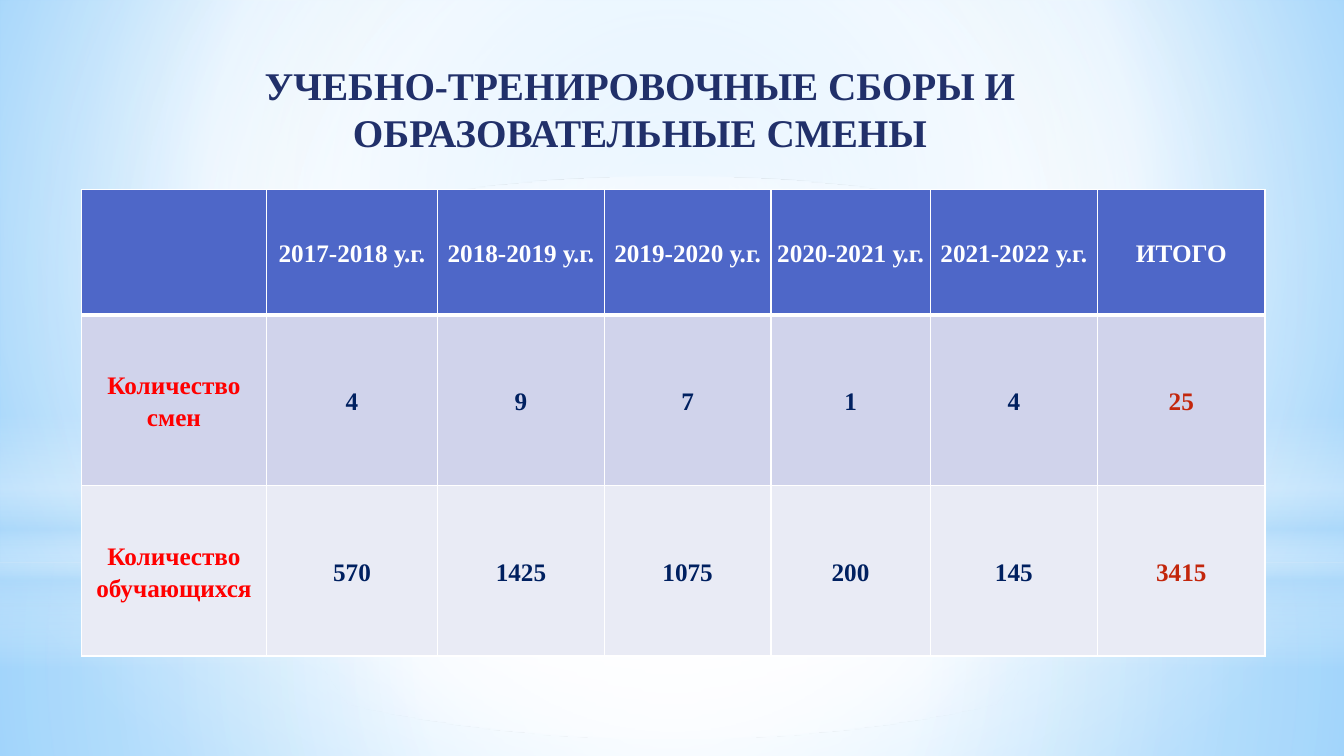
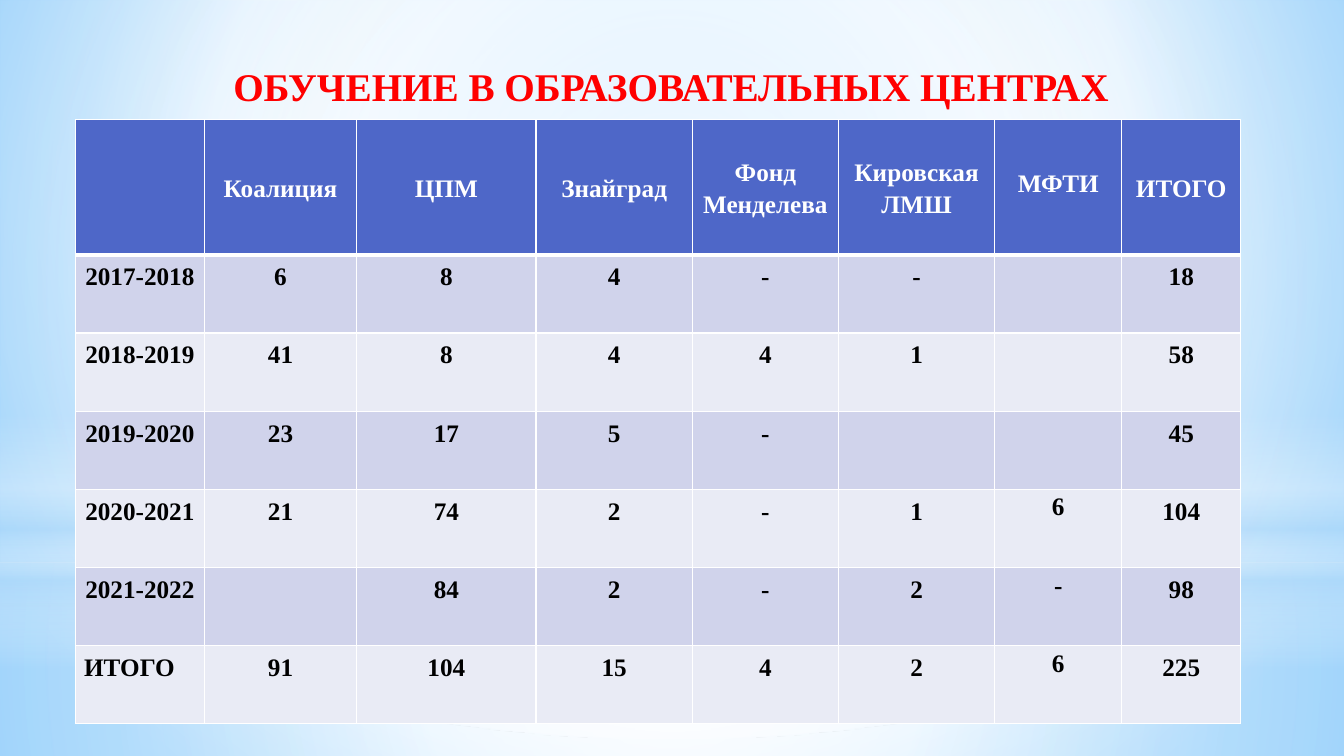
"""Build two slides with tables on training camps and learning centres."""
from dataclasses import dataclass

from lxml import etree
from pptx import Presentation
from pptx.dml.color import RGBColor
from pptx.enum.shapes import MSO_SHAPE
from pptx.enum.text import MSO_ANCHOR, MSO_AUTO_SIZE, PP_ALIGN
from pptx.oxml.ns import qn
from pptx.util import Cm, Pt

RECT, OVAL = MSO_SHAPE.RECTANGLE, MSO_SHAPE.OVAL
TOP, MIDDLE = MSO_ANCHOR.TOP, MSO_ANCHOR.MIDDLE
LEFT, CENTER = PP_ALIGN.LEFT, PP_ALIGN.CENTER
FIXED = MSO_AUTO_SIZE.NONE


@dataclass(frozen=True)
class Theme:
    """Colours, type sizes and measures of the deck."""
    font: str = "Times New Roman"
    head: int = 28
    body: int = 18
    lead: float = 1.15
    after: int = 10
    thin: int = 1
    thick: int = 3
    wide: float = 33.87
    high: float = 19.05
    pad: tuple = (0.22, 0.11)
    white: str = "FFFFFF"
    black: str = "000000"
    red: str = "FF0000"
    rust: str = "C3260C"
    navy: str = "002060"
    ink: str = "21306A"
    blue: str = "4E67C8"
    bands: tuple = ("E9EBF5", "D0D3EB")
    sky: str = "B4DCFA"


T = Theme()
MID = (50, 50, 50, 50)
BACK = ((0, "9ED5FF", 100), (60, T.white, 100), (100, "5BB9FF", 100))
FLOOR = ((0, T.white, 91), (37, T.white, 76), (100, T.sky, 79))
WALL = ((0, T.white, 89), (48, T.white, 62), (100, T.sky, 79))
WAVE = ((0, T.white, 0), (29, T.white, 30), (45, T.sky, 40),
        (55, T.white, 26), (65, T.sky, 60), (100, T.white, 0))
GLOW = ((0, T.white, 100), (56, T.white, 0))
SCENE = ((RECT, 14.17, 4.88, FLOOR, MID), (RECT, 0, 14.17, WALL, MID),
         (RECT, 10.46, 6.35, WAVE, None), (OVAL, 4.45, 14.17, GLOW, MID))

CAMPS = (
    ("", "2017-2018 у.г.", "2018-2019 у.г.", "2019-2020 у.г.",
     "2020-2021 у.г.", "2021-2022 у.г.", "ИТОГО"),
    ("Количество смен", "4", "9", "7", "1", "4", "25"),
    ("Количество обучающихся", "570", "1425", "1075", "200", "145", "3415"),
)
HUBS = (
    ("", "Коалиция", "ЦПМ", "Знайград", "Фонд Менделева",
     "Кировская ЛМШ", "МФТИ", "ИТОГО"),
    ("2017-2018", "6", "8", "4", "-", "-", "", "18"),
    ("2018-2019", "41", "8", "4", "4", "1", "", "58"),
    ("2019-2020", "23", "17", "5", "-", "", "", "45"),
    ("2020-2021", "21", "74", "2", "-", "1", "6", "104"),
    ("2021-2022", "", "84", "2", "-", "2", "-", "98"),
    ("ИТОГО", "91", "104", "15", "4", "2", "6", "225"),
)


def node(parent, tag, **attrs):
    """Add a child element with the given attributes."""
    return etree.SubElement(parent, qn(tag), {k: str(v) for k, v in attrs.items()})


def shade(root, fill, stops, focus):
    """Fill with a gradient: round about a focus, or downward without one."""
    fill.solid()
    old = root.find(".//" + qn("a:solidFill"))
    grad = etree.Element(qn("a:gradFill"), rotWithShape="1")
    items = node(grad, "a:gsLst")
    for pos, color, alpha in stops:
        stop = node(items, "a:gs", pos=pos * 1000)
        tint = node(stop, "a:srgbClr", val=color)
        if alpha < 100:
            node(tint, "a:alpha", val=alpha * 1000)
    if focus:
        way = node(grad, "a:path", path="circle")
        node(way, "a:fillToRect", **{k: v * 1000 for k, v in zip("ltrb", focus)})
    else:
        node(grad, "a:lin", ang=5400000, scaled=0)
    old.getparent().replace(old, grad)


def scene(master, slide):
    """Set the sky backdrop on the master, drawing its layers via a slide."""
    shade(master.element, master.background.fill, BACK, (20, 10, 20, 60))
    tree = master.shapes.element
    for num, (kind, top, high, stops, focus) in enumerate(SCENE):
        layer = slide.shapes.add_shape(kind, 0, Cm(top), Cm(T.wide), Cm(high))
        layer.shadow.inherit = False
        layer.line.fill.background()
        shade(layer.element.spPr, layer.fill, stops, focus)
        layer.element.find(".//" + qn("p:cNvPr")).set("id", str(50 + num))
        tree.insert(2 + num, layer.element)


def write(para, text, size, color, align=CENTER):
    """Add one bold run to an aligned paragraph."""
    para.alignment = align
    run = para.add_run()
    run.text = text
    font = run.font
    font.name, font.size, font.bold = T.font, Pt(size), True
    font.color.rgb = RGBColor.from_string(color)


def title(slide, text, box, color):
    """Place and fill the title."""
    shape = slide.shapes.title
    shape.left, shape.top, shape.width, shape.height = map(Cm, box)
    frame = shape.text_frame
    frame.word_wrap, frame.auto_size = True, FIXED
    frame.vertical_anchor = MIDDLE
    write(frame.paragraphs[0], text, T.head, color)


def border(cell, row):
    """Draw white cell borders, thick under the head row."""
    heavy = {0: "B", 1: "T"}.get(row)
    props = cell._tc.get_or_add_tcPr()
    for side in "LRTB":
        width = T.thick if side == heavy else T.thin
        line = node(props, "a:ln" + side, w=Pt(width))
        node(node(line, "a:solidFill"), "a:srgbClr", val=T.white)


def style(cell, row, pad, anchor):
    """Set the borders, fill, margins and anchor of a cell."""
    border(cell, row)
    cell.fill.solid()
    color = T.bands[row % 2] if row else T.blue
    cell.fill.fore_color.rgb = RGBColor.from_string(color)
    cell.margin_left = cell.margin_right = Cm(pad[0])
    cell.margin_top = cell.margin_bottom = Cm(pad[1])
    cell.vertical_anchor = anchor


def grid(slide, data, spot, cols, rows, tight, inks, anchor):
    """Add a table; inks colour the first, inner and last body columns."""
    table = slide.shapes.add_table(
        len(data), len(cols), *map(Cm, (*spot, sum(cols), sum(rows)))).table
    table.first_row = table.horz_banding = False
    for col, width in zip(table.columns, cols):
        col.width = Cm(width)
    for row, high in zip(table.rows, rows):
        row.height = Cm(high)
    tones = (inks[0], *[inks[1]] * (len(cols) - 2), inks[2])
    for r, line in enumerate(data):
        for c, text in enumerate(line):
            cell = table.cell(r, c)
            style(cell, r, (0, 0) if c == tight else T.pad, anchor if r else MIDDLE)
            if text:
                para = cell.text_frame.paragraphs[0]
                para.line_spacing, para.space_after = T.lead, Pt(T.after)
                align = LEFT if r and text == "ИТОГО" else CENTER
                write(para, text, T.body, tones[c] if r else T.white, align)
    return table


def main():
    """Build and save the deck."""
    deck = Presentation()
    deck.slide_width, deck.slide_height = Cm(T.wide), Cm(T.high)
    plain = deck.slide_layouts[5]

    camps = deck.slides.add_slide(plain)
    scene(deck.slide_master, camps)
    title(camps, "УЧЕБНО-ТРЕНИРОВОЧНЫЕ СБОРЫ И ОБРАЗОВАТЕЛЬНЫЕ СМЕНЫ",
          (4.06, 1.27, 24.13, 2.9), T.ink)
    grid(camps, CAMPS, (2.06, 4.78), (4.65, 4.32, 4.2, 4.2, 4.01, 4.22, 4.22),
         (3.15, 4.3, 4.3), 4, (T.red, T.navy, T.rust), MIDDLE)

    hubs = deck.slides.add_slide(plain)
    title(hubs, "ОБУЧЕНИЕ В ОБРАЗОВАТЕЛЬНЫХ ЦЕНТРАХ", (1.52, 1.3, 30.78, 1.73), T.red)
    table = grid(hubs, HUBS, (1.9, 3.02),
                 (3.25, 3.84, 4.52, 3.94, 3.68, 3.94, 3.2, 3),
                 (3.4, *[1.97] * 6), 6, [T.black] * 3, TOP)
    table.cell(0, 6).margin_bottom = Cm(0.25)
    deck.save("out.pptx")


if __name__ == "__main__":
    main()
